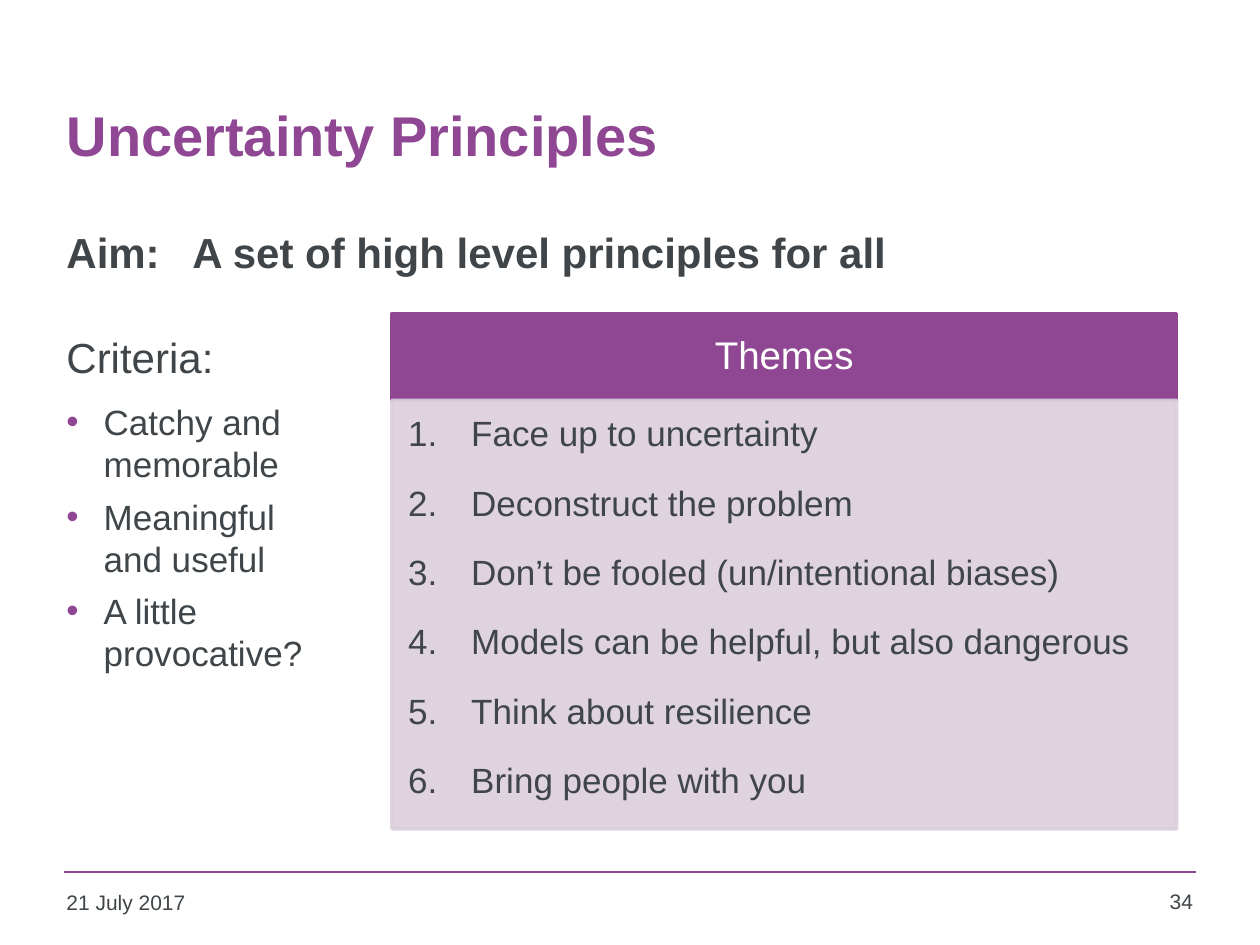
from dataclasses import dataclass

from lxml.etree import SubElement
from pptx import Presentation
from pptx.dml.color import RGBColor
from pptx.enum.shapes import MSO_CONNECTOR as Connector, MSO_SHAPE as Shape
from pptx.enum.text import MSO_ANCHOR as Anchor, PP_ALIGN as Align
from pptx.oxml.ns import qn
from pptx.util import Cm, Pt


@dataclass(frozen=True)
class Theme:
    font: str = "Arial"
    purple: RGBColor = RGBColor(0x8F, 0x46, 0x93)
    lilac: RGBColor = RGBColor(0xDB, 0xCF, 0xDC)
    ink: RGBColor = RGBColor(0x3F, 0x45, 0x48)
    white: RGBColor = RGBColor(0xFF, 0xFF, 0xFF)
    title: int = 32
    heading: int = 24
    panel: int = 22
    body: int = 20
    footer: int = 12


THEME = Theme()
LEFT = 1.09
COLUMN = 5.79
PANEL_LEFT, PANEL_WIDTH = 7.9, 15.82
CRITERIA = ["Catchy and memorable", "Meaningful and useful", "A little provocative?"]
PRINCIPLES = [
    "Face up to uncertainty",
    "Deconstruct the problem",
    "Don’t be fooled (un/intentional biases)",
    "Models can be helpful, but also dangerous",
    "Think about resilience",
    "Bring people with you",
]


def add_run(para, text, size, color=THEME.ink, bold=False):
    run = para.add_run()
    run.text = text
    run.font.name = THEME.font
    run.font.size = Pt(size)
    run.font.bold = bold
    run.font.color.rgb = color


def write_line(frame, text, size, color=THEME.ink, bold=False, align=Align.LEFT):
    para = frame.paragraphs[0]
    para.alignment = align
    add_run(para, text, size, color, bold)
    return para


def set_insets(frame, left, top, right, bottom):
    frame.margin_left, frame.margin_top = Cm(left), Cm(top)
    frame.margin_right, frame.margin_bottom = Cm(right), Cm(bottom)


def write_list(frame, items, indent, gap, spacing=1.0, numbered=False):
    for index, item in enumerate(items):
        para = frame.add_paragraph() if index else frame.paragraphs[0]
        para.alignment = Align.LEFT
        para.line_spacing = spacing
        para.space_after = Pt(gap)
        properties = para._p.get_or_add_pPr()
        properties.set("marL", str(Cm(indent)))
        properties.set("indent", str(-Cm(indent)))
        if numbered:
            SubElement(properties, qn("a:buFont"), typeface="+mj-lt")
            SubElement(properties, qn("a:buAutoNum"), type="arabicPeriod")
        else:
            color = SubElement(properties, qn("a:buClr"))
            SubElement(color, qn("a:srgbClr"), val=str(THEME.purple))
            SubElement(properties, qn("a:buFont"), typeface=THEME.font)
            SubElement(properties, qn("a:buChar"), char="•")
        add_run(para, item, THEME.body)


def add_box(page, left, top, width, height):
    box = page.shapes.add_textbox(Cm(left), Cm(top), Cm(width), Cm(height))
    box.text_frame.word_wrap = True
    return box.text_frame


def add_panel(page, top, height, color, anchor, opacity=100):
    panel = page.shapes.add_shape(
        Shape.RECTANGLE, Cm(PANEL_LEFT), Cm(top), Cm(PANEL_WIDTH), Cm(height)
    )
    panel.shadow.inherit = False
    panel.line.width = Pt(2)
    for fill in (panel.fill, panel.line.fill):
        fill.solid()
        fill.fore_color.rgb = color
    if opacity < 100:
        for shade in panel._element.spPr.iter(qn("a:srgbClr")):
            SubElement(shade, qn("a:alpha"), val=str(opacity * 1000))
    panel.text_frame.word_wrap = True
    panel.text_frame.vertical_anchor = anchor
    return panel.text_frame


def add_title(page, text):
    title = page.shapes.title
    title.left, title.top = Cm(LEFT), Cm(1.12)
    title.width, title.height = Cm(23.04), Cm(3.18)
    title.text_frame.vertical_anchor = Anchor.MIDDLE
    write_line(title.text_frame, text, THEME.title, THEME.purple, bold=True)


def add_footer(page, date, number):
    rule = page.shapes.add_connector(
        Connector.STRAIGHT, Cm(1.3), Cm(17.58), Cm(24.1), Cm(17.58)
    )
    rule.line.color.rgb = THEME.purple
    rule.line.width = Pt(1)
    SubElement(rule._element.spPr, qn("a:effectLst"))
    write_line(add_box(page, LEFT, 17.81, COLUMN, 0.91), date, THEME.footer)
    number_box = add_box(page, 22.5, 17.78, 1.8, 0.94)
    write_line(number_box, number, THEME.footer, align=Align.RIGHT)


def add_criteria(page):
    write_line(add_box(page, LEFT, 6.55, COLUMN, 1.78), "Criteria:", THEME.heading)
    write_list(add_box(page, LEFT, 7.95, COLUMN, 6.58), CRITERIA, indent=0.75, gap=6)


def add_themes(page):
    header = add_panel(page, 6.32, 1.75, THEME.purple, Anchor.MIDDLE)
    set_insets(header, 0.43, 0.25, 0.43, 0.25)
    para = write_line(header, "Themes", THEME.panel, THEME.white, align=Align.CENTER)
    para.line_spacing = 0.9
    content = add_panel(page, 8.07, 8.64, THEME.lilac, Anchor.TOP, opacity=90)
    set_insets(content, 0.33, 0.33, 0.43, 0.48)
    write_list(content, PRINCIPLES, indent=1.27, gap=18, spacing=0.9, numbered=True)


def main():
    deck = Presentation()
    deck.slide_width, deck.slide_height = Cm(25.4), Cm(19.05)
    page = deck.slides.add_slide(deck.slide_layouts[5])
    add_title(page, "Uncertainty Principles")
    aim = add_box(page, LEFT, 4.45, 23.04, 2.49)
    write_line(aim, "Aim:\tA set of high level principles for all", THEME.heading, bold=True)
    add_criteria(page)
    add_themes(page)
    add_footer(page, "21 July 2017", "34")
    deck.save("out.pptx")


if __name__ == "__main__":
    main()
